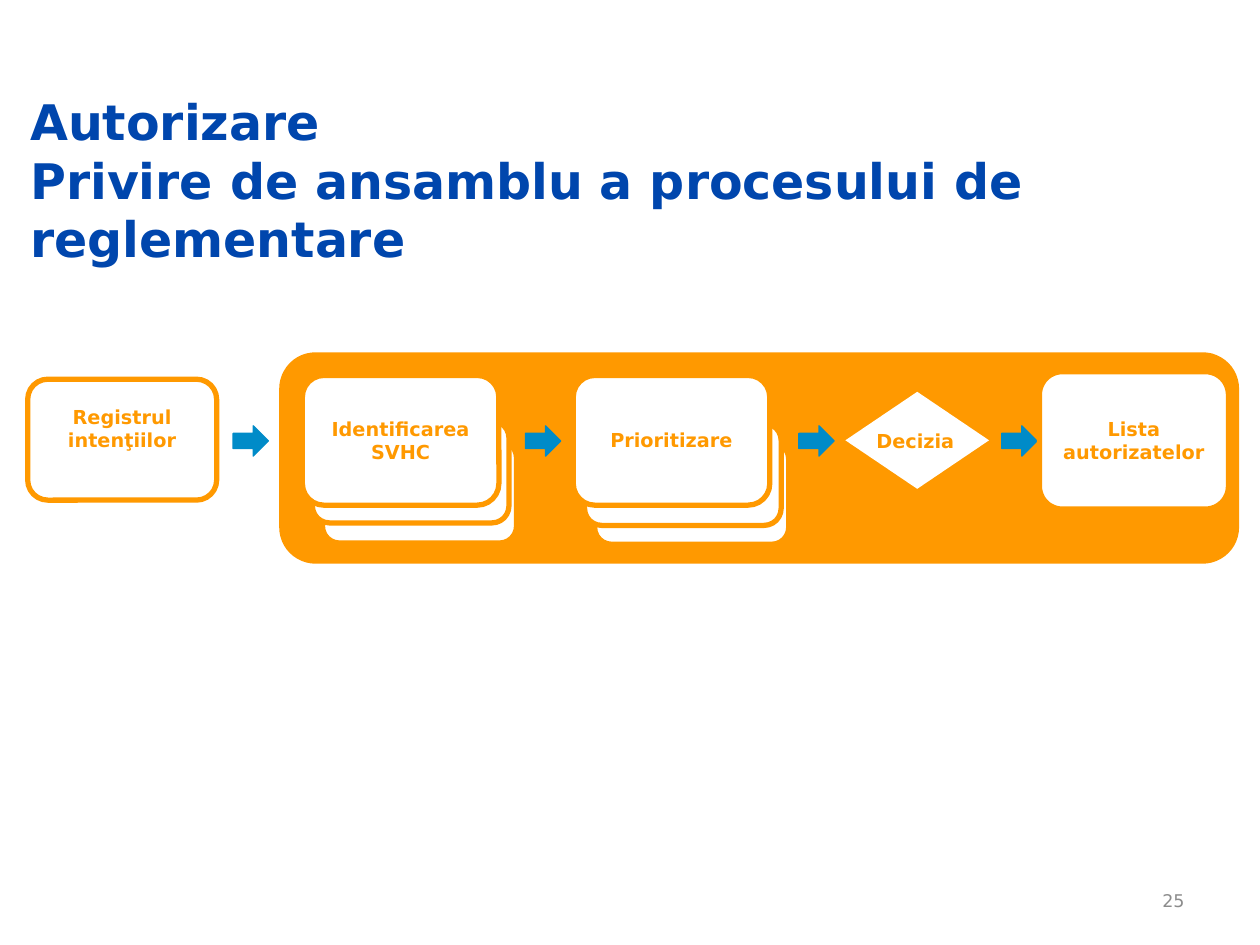
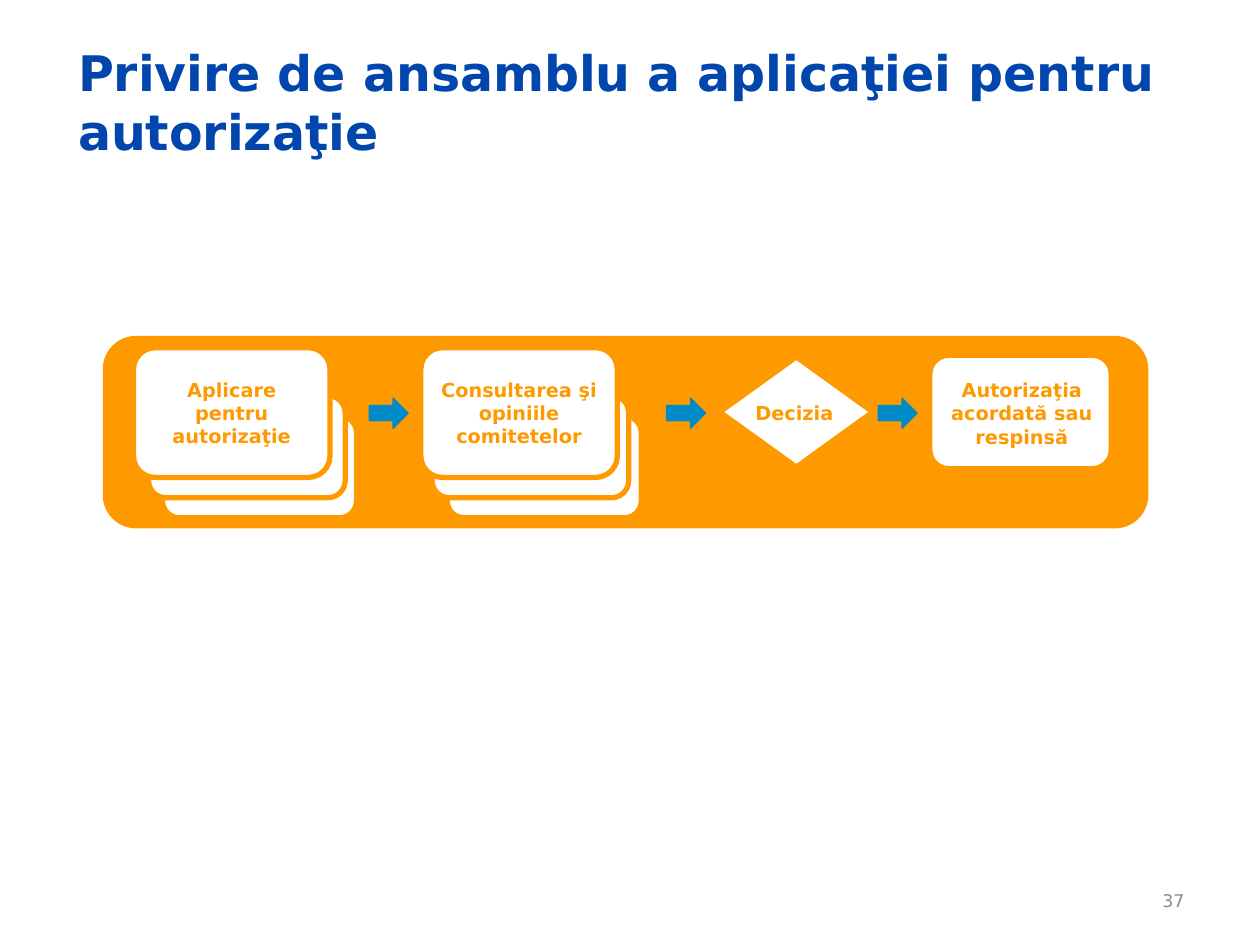
"""Build two slides that show the authorisation process as flow diagrams."""
from pptx import Presentation
from pptx.dml.color import RGBColor
from pptx.enum.shapes import MSO_SHAPE
from pptx.enum.text import MSO_ANCHOR, MSO_AUTO_SIZE, PP_ALIGN
from pptx.util import Inches, Pt

ROUNDED = MSO_SHAPE.ROUNDED_RECTANGLE
PROCESS = MSO_SHAPE.FLOWCHART_ALTERNATE_PROCESS
ARROW = MSO_SHAPE.RIGHT_ARROW
DIAMOND = MSO_SHAPE.DIAMOND
TOP, MIDDLE = MSO_ANCHOR.TOP, MSO_ANCHOR.MIDDLE
LEFT, CENTER, RIGHT = PP_ALIGN.LEFT, PP_ALIGN.CENTER, PP_ALIGN.RIGHT
NO_AUTOFIT = MSO_AUTO_SIZE.NONE

COLORS = {
    "title": "0046AD",
    "process": "FF9900",
    "arrow": "008BC8",
    "card": "FFFFFF",
    "number": "8C8C8C",
}
FORMATS = {
    "title": {"size": Pt(28), "bold": True},
    "process": {"size": Pt(11), "bold": True},
    "number": {"size": Pt(10), "bold": False},
}
FONT_NAME = "DejaVu Sans"
TOP_LAYER_SIZE = (1.56, 1.03)
MIDDLE_LAYER_SIZE = (1.56, 0.81)
BACK_LAYER_SIZE = (1.54, 0.81)

SLIDES = [
    {
        "title": "Autorizare\vPrivire de ansamblu a procesului de reglementare",
        "title_box": (0.14, 0.6, 9.15, 1.65),
        "title_anchor": MIDDLE,
        "number": "25",
        "band": (2.23, 2.81, 7.59, 1.65),
        "arrow_lefts": (1.85, 4.17, 6.34, 7.95),
        "arrow_top": 3.38,
        "arrow_width": 0.28,
        "stacks": [
            ("Identificarea SVHC", 2.4, 2.98, (0.08, 0.36), (0.16, 0.52)),
            ("Prioritizare", 4.55, 2.98, (0.09, 0.38), (0.17, 0.53)),
        ],
        "cards": [
            (ROUNDED, (0.22, 3.01, 1.5, 0.96), "Registrul intenţiilor", 0.23),
            (ROUNDED, (8.25, 2.95, 1.5, 1.09), "Lista autorizatelor", 0.05),
        ],
        "diamond": (6.71, 3.11, 1.14, 0.77),
        "labels": [("Decizia", (6.65, 3.35, 1.23, 0.29))],
    },
    {
        "title": "Privire de ansamblu a aplicaţiei pentru autorizaţie",
        "title_box": (0.52, 0.29, 8.97, 1.21),
        "title_anchor": TOP,
        "number": "37",
        "band": (0.83, 2.68, 8.27, 1.5),
        "arrow_lefts": (2.93, 5.29, 6.97),
        "arrow_top": 3.16,
        "arrow_width": 0.31,
        "stacks": [
            ("Aplicare pentru autorizaţie", 1.06, 2.76, (0.12, 0.38), (0.23, 0.54)),
            ("Consultarea şi opiniile comitetelor", 3.34, 2.76, (0.09, 0.38), (0.21, 0.54)),
        ],
        "cards": [(PROCESS, (7.38, 2.82, 1.44, 0.9), "", 0.05)],
        "diamond": (5.75, 2.86, 1.14, 0.82),
        "labels": [
            ("Decizia", (5.69, 3.13, 1.23, 0.29)),
            ("Autorizaţia acordată sau respinsă", (7.4, 2.95, 1.42, 0.66)),
        ],
    },
]


def write_text(shape, text, style, alignment, anchor=MIDDLE):
    frame = shape.text_frame
    frame.text = text
    frame_format = {"word_wrap": True, "auto_size": NO_AUTOFIT, "vertical_anchor": anchor}
    for name, value in frame_format.items():
        setattr(frame, name, value)
    for paragraph in frame.paragraphs:
        paragraph.alignment = alignment
        for run in paragraph.runs:
            run.font.name = FONT_NAME
            run.font.color.rgb = RGBColor.from_string(COLORS[style])
            for name, value in FORMATS[style].items():
                setattr(run.font, name, value)


def draw_shape(slide, kind, box, fill, line=None, line_width=3):
    shape = slide.shapes.add_shape(kind, *map(Inches, box))
    shape.shadow.inherit = False
    shape.fill.solid()
    shape.fill.fore_color.rgb = RGBColor.from_string(COLORS[fill])
    if line:
        shape.line.color.rgb = RGBColor.from_string(COLORS[line])
        shape.line.width = Pt(line_width)
    else:
        shape.line.fill.background()
    return shape


presentation = Presentation()
presentation.slide_width = Inches(10)
presentation.slide_height = Inches(7.5)
title_only = presentation.slide_layouts[5]

for content in SLIDES:
    slide = presentation.slides.add_slide(title_only)
    title = slide.shapes.title
    for name, value in zip(("left", "top", "width", "height"), content["title_box"]):
        setattr(title, name, Inches(value))
    write_text(title, content["title"], "title", LEFT, content["title_anchor"])

    number = slide.shapes.add_textbox(*map(Inches, (7.17, 6.95, 2.33, 0.4)))
    write_text(number, content["number"], "number", RIGHT)

    draw_shape(slide, PROCESS, content["band"], "process", "process", 2)

    for left in content["arrow_lefts"]:
        arrow_box = (left, content["arrow_top"], content["arrow_width"], 0.24)
        draw_shape(slide, ARROW, arrow_box, "arrow", "arrow", 0.75)

    for text, left, top, middle_offset, back_offset in content["stacks"]:
        layers = [
            (ROUNDED, back_offset, BACK_LAYER_SIZE),
            (PROCESS, middle_offset, MIDDLE_LAYER_SIZE),
            (ROUNDED, (0, 0), TOP_LAYER_SIZE),
        ]
        for kind, (right_shift, down_shift), size in layers:
            layer_box = (left + right_shift, top + down_shift, *size)
            card = draw_shape(slide, kind, layer_box, "card", "process")
        write_text(card, text, "process", CENTER)

    for kind, box, text, bottom_margin in content["cards"]:
        card = draw_shape(slide, kind, box, "card", "process")
        if text:
            write_text(card, text, "process", CENTER)
            card.text_frame.margin_bottom = Inches(bottom_margin)

    draw_shape(slide, DIAMOND, content["diamond"], "card")
    for text, box in content["labels"]:
        label = slide.shapes.add_textbox(*map(Inches, box))
        write_text(label, text, "process", CENTER)

presentation.save("out.pptx")
